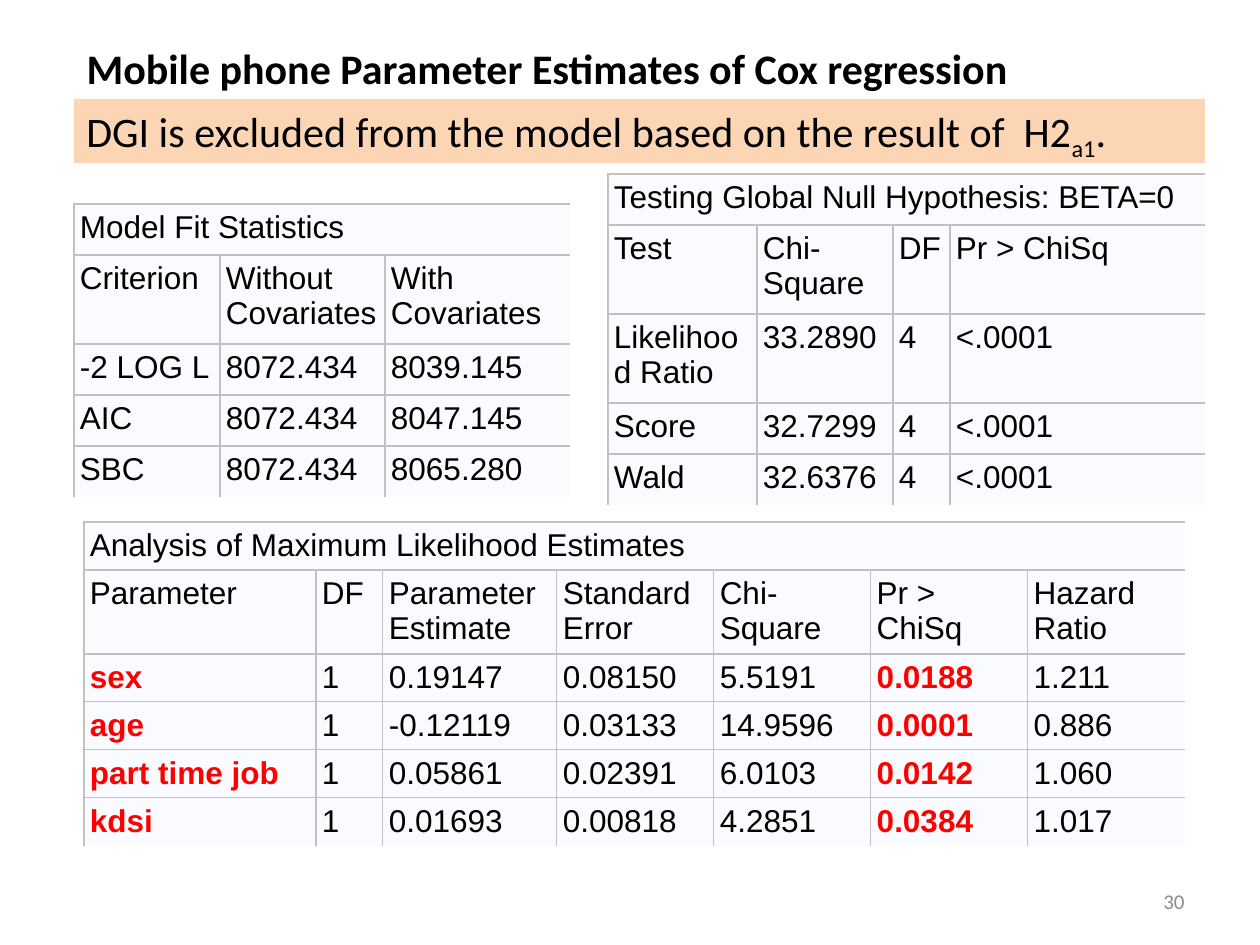
from lxml.etree import SubElement
from pptx import Presentation
from pptx.dml.color import RGBColor
from pptx.enum.shapes import MSO_SHAPE
from pptx.enum.text import MSO_ANCHOR, MSO_AUTO_SIZE, PP_ALIGN
from pptx.oxml.ns import qn
from pptx.util import Emu, Pt

PX_PER_INCH = 126
BLACK = RGBColor(0x00, 0x00, 0x00)
RED = RGBColor(0xFF, 0x00, 0x00)
GREY = RGBColor(0x8C, 0x8C, 0x8C)
PEACH = RGBColor(0xFC, 0xD5, 0xB5)
CELL_FILL = RGBColor(0xFA, 0xFB, 0xFE)
BORDER = RGBColor(0xC1, 0xC1, 0xC1)

ONE_LINE, TWO_LINES = 51, 89
CELL_MARGIN = 6

FIT_ROWS = [
    ["Model Fit Statistics"],
    ["Criterion", "Without\nCovariates", "With\nCovariates"],
    ["-2 LOG L", "8072.434", "8039.145"],
    ["AIC", "8072.434", "8047.145"],
    ["SBC", "8072.434", "8065.280"],
]
NULL_TEST_ROWS = [
    ["Testing Global Null Hypothesis: BETA=0"],
    ["Test", "Chi-Square", "DF", "Pr > ChiSq"],
    ["Likelihood Ratio", "33.2890", "4", "<.0001"],
    ["Score", "32.7299", "4", "<.0001"],
    ["Wald", "32.6376", "4", "<.0001"],
]
ESTIMATE_ROWS = [
    ["Analysis of Maximum Likelihood Estimates"],
    ["Parameter", "DF", "Parameter\nEstimate", "Standard\nError",
     "Chi-Square", "Pr > ChiSq", "Hazard\nRatio"],
    ["sex", "1", "0.19147", "0.08150", "5.5191", "0.0188", "1.211"],
    ["age", "1", "-0.12119", "0.03133", "14.9596", "0.0001", "0.886"],
    ["part time job", "1", "0.05861", "0.02391", "6.0103", "0.0142", "1.060"],
    ["kdsi", "1", "0.01693", "0.00818", "4.2851", "0.0384", "1.017"],
]


def px(length):
    return Emu(round(length * 914400 / PX_PER_INCH))


def add_span(para, text, size, color=BLACK, bold=False, font="Calibri"):
    span = para.add_run()
    span.text = text
    span.font.name = font
    span.font.size = Pt(size)
    span.font.bold = bold
    span.font.color.rgb = color
    return span


def place(shape, box):
    shape.left, shape.top, shape.width, shape.height = map(px, box)


def set_borders(cell, sides):
    """Draw the named sides (L, R, T, B) and clear the others."""
    properties = cell._tc.get_or_add_tcPr()
    for side in "LRTB":
        line = SubElement(properties, qn(f"a:ln{side}"), w=str(Pt(0.75)))
        if side in sides:
            solid = SubElement(line, qn("a:solidFill"))
            SubElement(solid, qn("a:srgbClr"), val=str(BORDER))
        else:
            SubElement(line, qn("a:noFill"))


def add_title(page, box):
    title = page.shapes.title
    place(title, box)
    frame = title.text_frame
    frame.auto_size = MSO_AUTO_SIZE.NONE
    frame.vertical_anchor = MSO_ANCHOR.TOP
    para = frame.paragraphs[0]
    para.alignment = PP_ALIGN.LEFT
    add_span(para, "Mobile phone Parameter Estimates of Cox regression", 24, bold=True)


def add_banner(page, box):
    banner = page.shapes.add_shape(MSO_SHAPE.RECTANGLE, *map(px, box))
    banner.shadow.inherit = False
    banner.fill.solid()
    banner.fill.fore_color.rgb = PEACH
    banner.line.fill.background()
    frame = banner.text_frame
    frame.word_wrap = True
    frame.vertical_anchor = MSO_ANCHOR.TOP
    para = frame.paragraphs[0]
    para.alignment = PP_ALIGN.LEFT
    add_span(para, "DGI is excluded from the model based on the result of  H2", 24)
    subscript = add_span(para, "a1", 24)
    subscript.font._element.set("baseline", "-25000")
    add_span(para, ".", 24)


def add_cell_text(cell, text, highlighted):
    para = cell.text_frame.paragraphs[0]
    for index, part in enumerate(text.split("\n")):
        if index:
            para.add_line_break()
        add_span(para, part, 18, RED if highlighted else BLACK, highlighted, "Arial")


def add_statistics_table(page, left, top, widths, heights, rows, red_columns=()):
    """Table with a caption row, a heading row and open right and bottom edges."""
    size = sum(widths), sum(heights)
    table = page.shapes.add_table(
        len(rows), len(widths), *map(px, (left, top, *size))).table
    table.first_row = table.horz_banding = False
    for column, width in zip(table.columns, widths):
        column.width = px(width)
    for row, height in zip(table.rows, heights):
        row.height = px(height)
    last_row, last_column = len(rows) - 1, len(widths) - 1
    for r, texts in enumerate(rows):
        for c in range(len(widths)):
            cell = table.cell(r, c)
            cell.margin_left = cell.margin_right = px(CELL_MARGIN)
            cell.margin_top = cell.margin_bottom = px(CELL_MARGIN)
            right = "R" if r > 0 and c < last_column else ""
            bottom = "B" if r < last_row else ""
            left_side = "L" if r > 0 or c == 0 else ""
            set_borders(cell, left_side + "T" + right + bottom)
            cell.fill.solid()
            cell.fill.fore_color.rgb = CELL_FILL
            if c < len(texts):
                add_cell_text(cell, texts[c], r > 1 and c in red_columns)
    table.cell(0, 0).merge(table.cell(0, last_column))


def add_page_number(page, box):
    number = page.shapes.add_textbox(*map(px, box))
    frame = number.text_frame
    frame.word_wrap = True
    frame.vertical_anchor = MSO_ANCHOR.MIDDLE
    para = frame.paragraphs[0]
    para.alignment = PP_ALIGN.RIGHT
    add_span(para, "30", 12, GREY)


def main():
    deck = Presentation()
    deck.slide_width, deck.slide_height = px(1260), px(945)
    page = deck.slides.add_slide(deck.slide_layouts[5])

    # Heading
    add_title(page, (74, 36, 1131, 64))
    add_banner(page, (74, 99, 1131, 64))

    # Model tests, side by side
    add_statistics_table(page, 74, 204, [146, 165, 185],
                         [ONE_LINE, TWO_LINES] + [ONE_LINE] * 3, FIT_ROWS)
    add_statistics_table(page, 608, 174, [149, 136, 57, 255],
                         [ONE_LINE] + [TWO_LINES] * 2 + [ONE_LINE] * 2, NULL_TEST_ROWS)

    # Parameter estimates
    add_statistics_table(page, 84, 522, [232, 67, 174] + [157] * 4,
                         [48, 84] + [48] * 4, ESTIMATE_ROWS, red_columns=(0, 5))

    add_page_number(page, (903, 876, 294, 50))
    deck.save("out.pptx")


if __name__ == "__main__":
    main()
